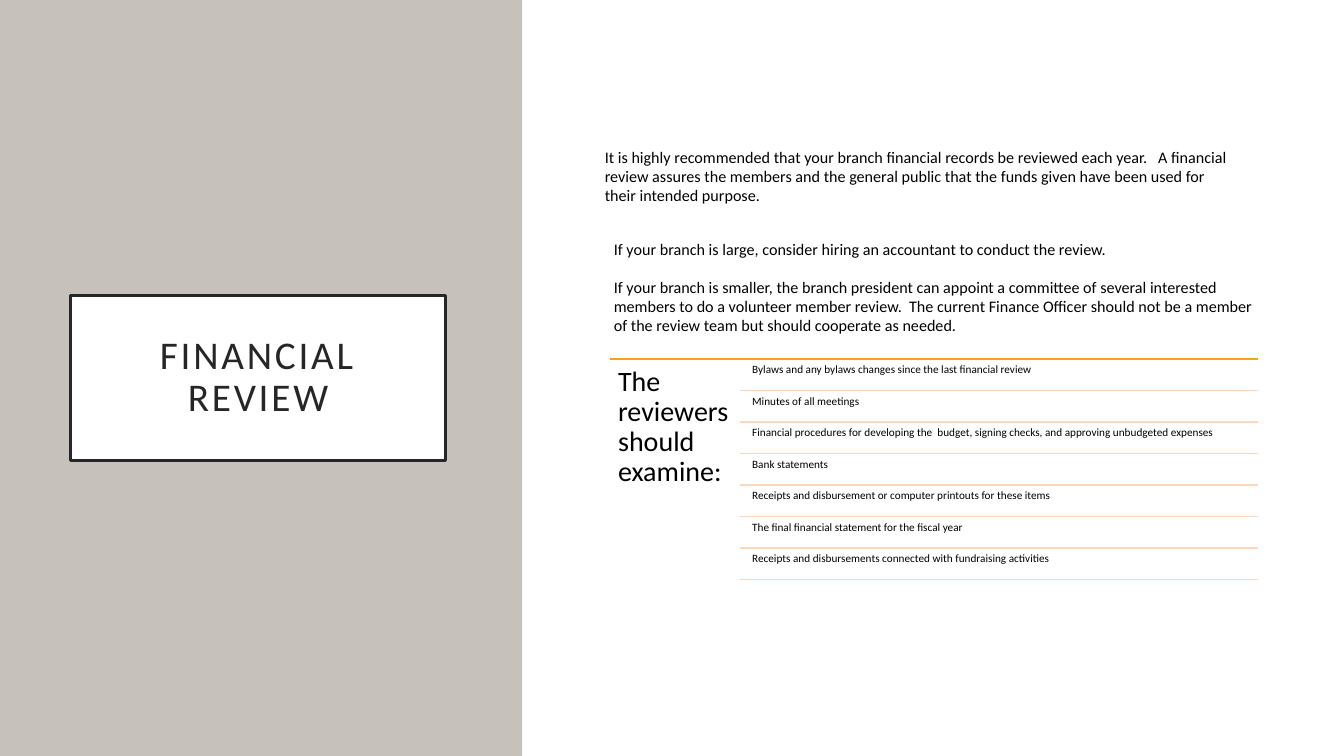
from dataclasses import dataclass

from pptx import Presentation
from pptx import util as u
from pptx.dml.color import RGBColor
from pptx.enum import shapes, text
from pptx.oxml import xmlchemy


@dataclass(frozen=True)
class Theme:
    font: str = "Calibri"
    panel: str = "C6C1BA"
    paper: str = "FFFFFF"
    heading: str = "262626"
    ink: str = "000000"
    accent: str = "F6A21D"
    divider: str = "FBD7BD"
    title_size: float = 28
    lead_size: float = 20
    body_size: float = 11.5
    item_size: float = 8
    frame_width: float = 2.5
    rule_width: float = 1


THEME = Theme()

ADVICE = [
    (5.9, 1.41, 6.38, 1.07,
     "It is highly recommended that your branch financial records be reviewed each year.   "
     "A financial review assures the members and the general public that the funds given "
     "have been used for their intended purpose."),
    (5.99, 2.33, 5.09, 0.49,
     "If your branch is large, consider hiring an accountant to conduct the review."),
    (5.99, 2.7, 6.64, 0.68,
     "If your branch is smaller, the branch president can appoint a committee of several "
     "interested members to do a volunteer member review.  The current Finance Officer "
     "should not be a member of the review team but should cooperate as needed."),
]

RECORDS = [
    "Bylaws and any bylaws changes since the last financial review",
    "Minutes of all meetings",
    "Financial procedures for developing the  budget, signing checks, "
    "and approving unbudgeted expenses",
    "Bank statements",
    "Receipts and disbursement or computer printouts for these items",
    "The final financial statement for the fiscal year",
    "Receipts and disbursements connected with fundraising activities",
]


def apply(target, formats):
    for name, value in formats.items():
        setattr(target, name, value)


def place(left, top, width, height):
    return dict(zip(("left", "top", "width", "height"),
                    map(u.Inches, (left, top, width, height))))


def write(frame, wording, size, color, inset=None, paragraph_format=None, **frame_format):
    apply(frame, {"word_wrap": True, **frame_format})
    if inset is not None:
        apply(frame, {f"margin_{side}": u.Inches(inset)
                      for side in ("left", "top", "right", "bottom")})
    paragraph = frame.paragraphs[0]
    apply(paragraph, paragraph_format or {})
    run = paragraph.add_run()
    run.text = wording
    apply(run.font, {"name": THEME.font, "size": u.Pt(size)})
    run.font.color.rgb = RGBColor.from_string(color)
    return run


def add_panel(slide, box, color):
    panel = slide.shapes.add_shape(shapes.MSO_SHAPE.RECTANGLE, **place(*box))
    panel.shadow.inherit = False
    panel.fill.solid()
    panel.fill.fore_color.rgb = RGBColor.from_string(color)
    panel.line.fill.background()


def add_title(slide, wording):
    title = slide.shapes.title
    apply(title, place(0.7, 2.93, 3.72, 1.64))
    title.fill.solid()
    title.fill.fore_color.rgb = RGBColor.from_string(THEME.paper)
    title.line.color.rgb = RGBColor.from_string(THEME.heading)
    title.line.width = u.Pt(THEME.frame_width)
    run = write(title.text_frame, wording, THEME.title_size, THEME.heading, inset=0.2,
                paragraph_format={"alignment": text.PP_ALIGN.CENTER, "line_spacing": 0.9},
                vertical_anchor=text.MSO_ANCHOR.MIDDLE,
                auto_size=text.MSO_AUTO_SIZE.NONE)
    run.font._element.set("spc", "200")
    title.element.getparent().append(title.element)


def add_text(parent, box, wording, size, **formats):
    label = parent.shapes.add_textbox(**place(*box))
    write(label.text_frame, wording, size, THEME.ink, **formats)


def add_rule(parent, left, right, y, color):
    rule = parent.shapes.add_connector(
        shapes.MSO_CONNECTOR.STRAIGHT,
        u.Inches(left), u.Inches(y), u.Inches(right), u.Inches(y))
    rule.line.color.rgb = RGBColor.from_string(color)
    rule.line.width = u.Pt(THEME.rule_width)
    properties = rule.element.spPr
    properties.append(xmlchemy.OxmlElement("a:effectLst"))


def add_checklist(slide, lead, records):
    left, item_left, right = 6.05, 7.34, 12.48
    top, height = 3.56, 2.19
    row_height = height / len(records)
    checklist = slide.shapes.add_group_shape()
    add_rule(checklist, left, right, top, THEME.accent)
    add_text(checklist, (left, top, item_left - left, height), lead, THEME.lead_size,
             inset=0.08, paragraph_format={"line_spacing": 0.9})
    for row, record in enumerate(records):
        row_top = top + row * row_height
        add_text(checklist, (item_left + 0.09, row_top + 0.02, 5.05, 0.3), record,
                 THEME.item_size, inset=0.03, paragraph_format={"line_spacing": 0.9})
        add_rule(checklist, item_left, right, row_top + row_height, THEME.divider)


def main():
    deck = Presentation()
    apply(deck, {"slide_width": u.Inches(13.33), "slide_height": u.Inches(7.5)})
    slide = deck.slides.add_slide(deck.slide_layouts[5])
    add_panel(slide, (0, 0, 5.18, 7.5), THEME.panel)
    add_title(slide, "FINANCIAL REVIEW")
    add_panel(slide, (5.2, 0, 8.13, 7.5), THEME.paper)
    for *box, wording in ADVICE:
        add_text(slide, box, wording, THEME.body_size,
                 paragraph_format={"space_after": u.Pt(6)},
                 auto_size=text.MSO_AUTO_SIZE.SHAPE_TO_FIT_TEXT)
    add_checklist(slide, "The reviewers should examine:", RECORDS)
    deck.save("out.pptx")


if __name__ == "__main__":
    main()
